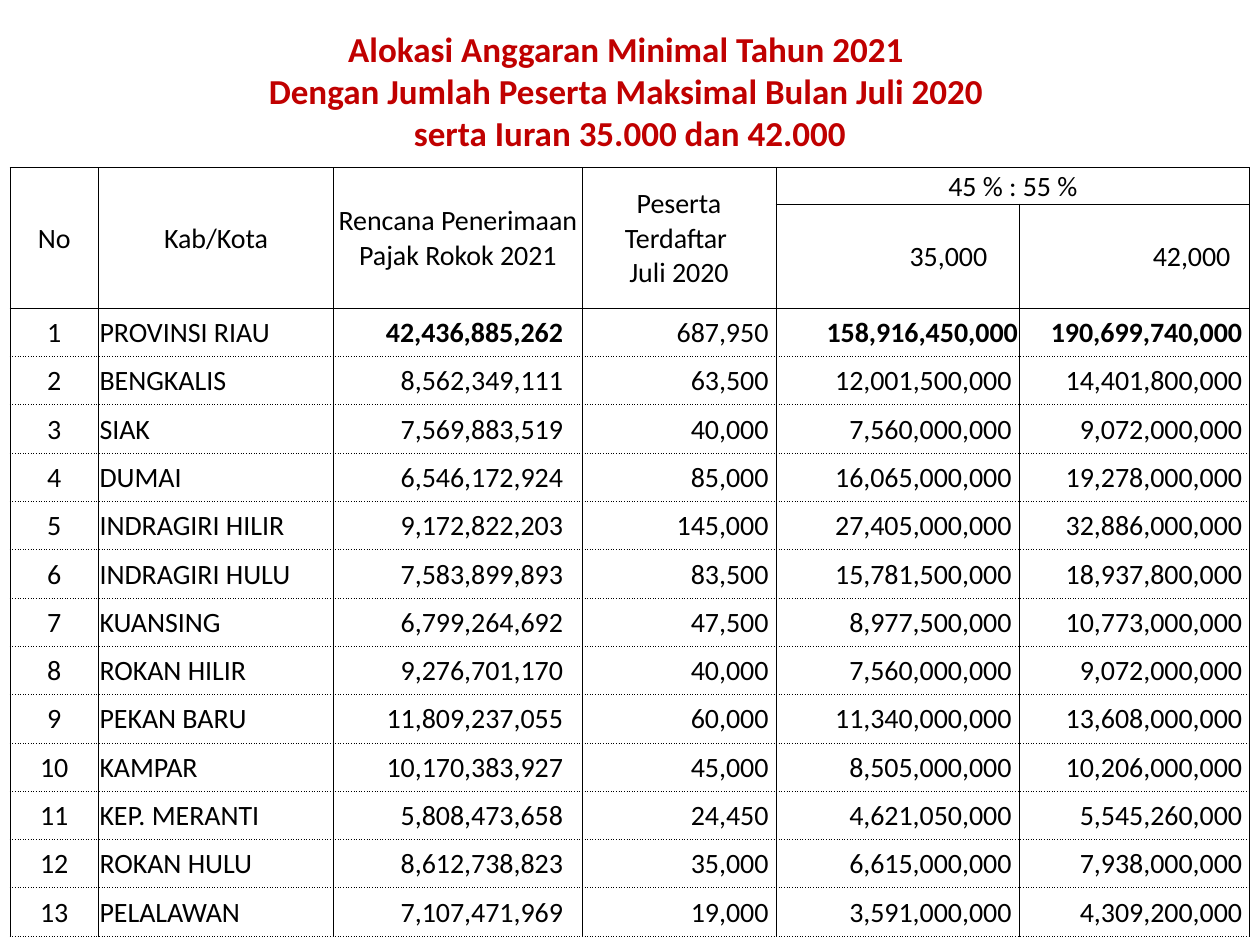
import pptx
import pptx.util
import pptx.dml.color
import pptx.enum.text
import pptx.oxml.ns
from lxml import etree

Inches = pptx.util.Inches
Pt = pptx.util.Pt
ALIGN = pptx.enum.text.PP_ALIGN
MIDDLE = pptx.enum.text.MSO_ANCHOR.MIDDLE
RED = pptx.dml.color.RGBColor(0xC0, 0x00, 0x00)
BLACK = pptx.dml.color.RGBColor(0x00, 0x00, 0x00)
WHITE = pptx.dml.color.RGBColor(0xFF, 0xFF, 0xFF)


def write_lines(frame, lines, size, color, bold, align):
    for index, line in enumerate(lines):
        para = frame.paragraphs[0] if index == 0 else frame.add_paragraph()
        para.alignment = align
        span = para.add_run()
        span.text = line
        span.font.name = "Calibri"
        span.font.size = Pt(size)
        span.font.bold = bold
        span.font.color.rgb = color


def draw_borders(cell, top, bottom):
    props = cell._tc.get_or_add_tcPr()
    for side, dash in (("L", "solid"), ("R", "solid"), ("T", top), ("B", bottom)):
        line = etree.SubElement(props, pptx.oxml.ns.qn("a:ln" + side), w=str(Pt(0.5)))
        fill = etree.SubElement(line, pptx.oxml.ns.qn("a:solidFill"))
        etree.SubElement(fill, pptx.oxml.ns.qn("a:srgbClr"), val=str(BLACK))
        etree.SubElement(line, pptx.oxml.ns.qn("a:prstDash"), val=dash)


deck = pptx.Presentation()
deck.slide_width = Inches(10)
deck.slide_height = Inches(7.5)
page = deck.slides.add_slide(deck.slide_layouts[5])

# Title
title = page.shapes.title
title.left, title.top = Inches(0.12), Inches(0.13)
title.width, title.height = Inches(9.76), Inches(1.18)
title.text_frame.vertical_anchor = MIDDLE
title.text_frame.auto_size = pptx.enum.text.MSO_AUTO_SIZE.NONE
write_lines(title.text_frame, [
    "Alokasi Anggaran Minimal Tahun 2021 ",
    "Dengan Jumlah Peserta Maksimal Bulan Juli 2020 ",
    "serta Iuran 35.000 dan 42.000",
], 20, RED, True, ALIGN.CENTER)

# Region, planned cigarette tax revenue, registered members
regions = [
    ("PROVINSI RIAU", 42436885262, 687950),
    ("BENGKALIS", 8562349111, 63500),
    ("SIAK", 7569883519, 40000),
    ("DUMAI", 6546172924, 85000),
    ("INDRAGIRI HILIR", 9172822203, 145000),
    ("INDRAGIRI HULU", 7583899893, 83500),
    ("KUANSING", 6799264692, 47500),
    ("ROKAN HILIR", 9276701170, 40000),
    ("PEKAN BARU", 11809237055, 60000),
    ("KAMPAR", 10170383927, 45000),
    ("KEP. MERANTI", 5808473658, 24450),
    ("ROKAN HULU", 8612738823, 35000),
    ("PELALAWAN", 7107471969, 19000),
]
fees = (35000, 42000)

# Table grid
column_widths = [0.7, 1.87, 1.97, 1.54, 1.93, 1.83]
row_heights = [0.29, 0.56] + [4.99 / len(regions)] * len(regions)
frame = page.shapes.add_table(len(row_heights), len(column_widths), Inches(0.08),
                              Inches(1.33), Inches(9.84), Inches(5.84))
table = frame.table
table.first_row = False
table.horz_banding = False
for column, width in zip(table.columns, column_widths):
    column.width = Inches(width)
for row, height in zip(table.rows, row_heights):
    row.height = Inches(height)

# Cell borders, fills and margins: solid header, dotted lines between regions
for row_index, row in enumerate(table.rows):
    top = "solid" if row_index <= 2 else "sysDot"
    bottom = "solid" if row_index < 2 else "sysDot"
    for cell in row.cells:
        draw_borders(cell, top, bottom)
        cell.fill.solid()
        cell.fill.fore_color.rgb = WHITE
        cell.vertical_anchor = MIDDLE
        cell.margin_left = cell.margin_right = cell.margin_top = Inches(0.01)
        cell.margin_bottom = 0

# Header
headings = [["No"], ["Kab/Kota"], ["Rencana Penerimaan Pajak Rokok 2021"],
            ["Peserta Terdaftar ", "Juli 2020"], ["45 % : 55 %"]]
for column_index, lines in enumerate(headings):
    cell = table.cell(0, column_index)
    if column_index < 4:
        cell.merge(table.cell(1, column_index))
    else:
        cell.merge(table.cell(0, 5))
    write_lines(cell.text_frame, lines, 16, BLACK, False, ALIGN.CENTER)
for column_index, fee in enumerate(fees, start=4):
    cell = table.cell(1, column_index)
    cell.margin_left = Inches(1.06)
    write_lines(cell.text_frame, [f"{fee:,}"], 16, BLACK, False, ALIGN.LEFT)

# Region rows: the province carries 55 % of the yearly fees, the others 45 %
alignments = [ALIGN.CENTER, ALIGN.LEFT] + [ALIGN.RIGHT] * 4
right_margins = [0.01, 0.01, 0.15, 0.06, 0.06, 0.06]
for number, (region, revenue, members) in enumerate(regions, start=1):
    is_province = number == 1
    share = 55 if is_province else 45
    budgets = [members * fee * 12 * share // 100 for fee in fees]
    texts = [str(number), region] + [f"{value:,}" for value in (revenue, members, *budgets)]
    for column_index, text in enumerate(texts):
        cell = table.cell(number + 1, column_index)
        cell.margin_right = Inches(right_margins[column_index])
        bold = is_province and column_index in (2, 4, 5)
        write_lines(cell.text_frame, [text], 16, BLACK, bold, alignments[column_index])
table.cell(2, 4).margin_right = Inches(0.01)

deck.save("out.pptx")
